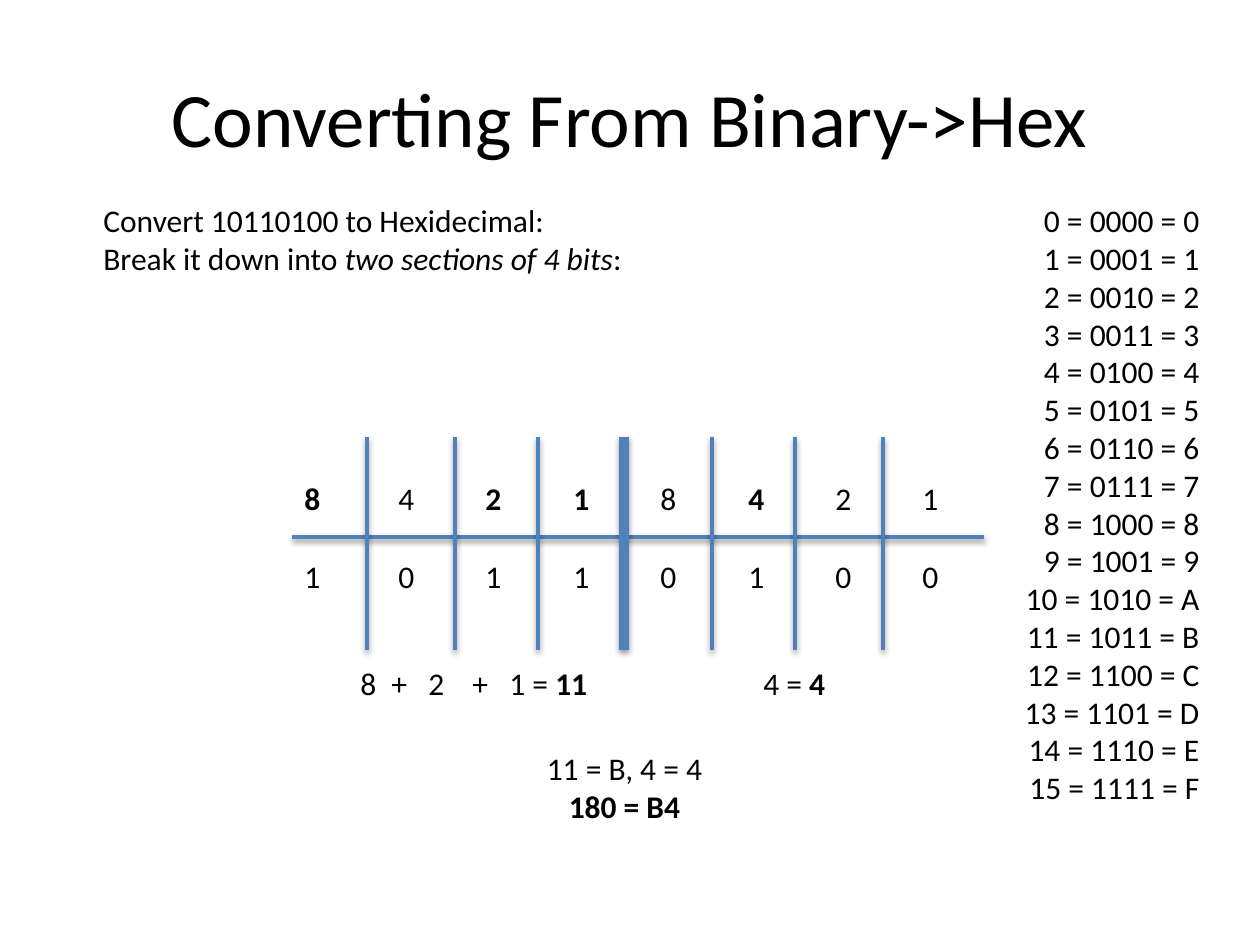
from lxml import etree
from pptx import Presentation
from pptx import util as u
from pptx.dml.color import RGBColor
from pptx.enum import shapes, text
from pptx.oxml import parse_xml
from pptx.oxml.ns import nsdecls, qn

BLACK = RGBColor(0x00, 0x00, 0x00)
BLUE = RGBColor(0x4F, 0x81, 0xBD)
PX_PER_INCH = 126
LEFT, CENTER, RIGHT = (text.PP_ALIGN.LEFT, text.PP_ALIGN.CENTER,
                       text.PP_ALIGN.RIGHT)

LINE_SHADOW = (
    f'<a:effectLst {nsdecls("a")}>'
    '<a:outerShdw blurRad="40000" dist="20000" dir="5400000" rotWithShape="0">'
    '<a:srgbClr val="000000"><a:alpha val="38000"/></a:srgbClr>'
    '</a:outerShdw></a:effectLst>')


def px(n):
    return u.Emu(round(n * u.Inches(1) / PX_PER_INCH))


def set_attrs(obj, values):
    for name, value in values.items():
        setattr(obj, name, value)


class Canvas:
    """Current slide together with its text and line style."""

    font = "Calibri"
    size = 18
    marks = {"": {}, "b": {"bold": True}, "i": {"italic": True}}

    def __init__(self, slide):
        self.s = slide

    def text(self, box, paragraphs, align=LEFT, size=size, wrap=False,
             anchor=text.MSO_ANCHOR.TOP, tabs=()):
        """Each paragraph is a list of (words, mark) runs."""
        sp = self.s.shapes.add_textbox(*map(px, box))
        tf = sp.text_frame
        set_attrs(tf, {"word_wrap": wrap, "vertical_anchor": anchor,
                       "auto_size": text.MSO_AUTO_SIZE.NONE})
        for i, runs in enumerate(paragraphs):
            p = tf.add_paragraph() if i else tf.paragraphs[0]
            p.alignment = align
            if tabs:
                self.tab_stops(p, tabs)
            for words, mark in runs:
                r = p.add_run()
                r.text = words
                set_attrs(r.font, {"name": self.font, "size": u.Pt(size),
                                   **self.marks[mark]})
                r.font.color.rgb = BLACK

    def tab_stops(self, p, stops):
        tab_list = etree.SubElement(p._p.get_or_add_pPr(), qn("a:tabLst"))
        for stop in stops:
            etree.SubElement(tab_list, qn("a:tab"), pos=str(px(stop)),
                             algn="l")

    def line(self, x1, y1, x2, y2, width=2):
        cx = self.s.shapes.add_connector(
            shapes.MSO_CONNECTOR.STRAIGHT, *map(px, (x1, y1, x2, y2)))
        cx.line.color.rgb = BLUE
        cx.line.width = u.Pt(width)
        cx._element.spPr.append(parse_xml(LINE_SHADOW))


def tabbed(cells):
    """Join (words, mark) cells into one paragraph with a tab before each."""
    return [("\t" + words if i else words, mark)
            for i, (words, mark) in enumerate(cells)]


def main():
    prs = Presentation()
    set_attrs(prs, {"slide_width": px(1260), "slide_height": px(945)})
    c = Canvas(prs.slides.add_slide(prs.slide_layouts[6]))

    c.text((63, 38, 1134, 157), [[("Converting From Binary->Hex", "")]],
           align=CENTER, size=44, wrap=True, anchor=text.MSO_ANCHOR.MIDDLE)

    c.line(292, 537, 984, 537)
    for x in (367, 455, 538, 624, 712, 795, 883):
        c.line(x, 437, x, 650, width=6 if x == 624 else 2)

    bits = "10110100"
    weights = "84218421"
    bit_tabs = [94 + round(87.4 * i) for i in range(len(bits) - 1)]
    weight_cells = [(w, "b" if bit == "1" else "")
                    for w, bit in zip(weights, bits)]
    bit_cells = [(bit, "") for bit in bits]
    for top, cells in ((473, weight_cells), (551, bit_cells)):
        c.text((292, top, 667, 50), [tabbed(cells)], wrap=True, tabs=bit_tabs)

    c.text((91, 195, 549, 89), [
        [("Convert 10110100 to Hexidecimal:", "")],
        [("Break it down into ", ""), ("two sections of 4 bits", "i"),
         (":", "")]])

    sum_cells = [(words, "") for words in ("8", "+", "2", "+", "1 = ")]
    c.text((348, 658, 260, 50), [tabbed(sum_cells) + [("11", "b")]],
           wrap=True, tabs=(31, 68, 112, 149))
    c.text((751, 658, 88, 50), [[("4 = ", ""), ("4", "b")]])
    c.text((533, 743, 183, 89),
           [[("11 = B, 4 = 4", "")], [("180 = B4", "b")]], align=CENTER)

    c.text((989, 195, 223, 624),
           [[(f"{n} = {n:04b} = {n:X}", "")] for n in range(16)],
           align=RIGHT, wrap=True)

    prs.save("out.pptx")


if __name__ == "__main__":
    main()
